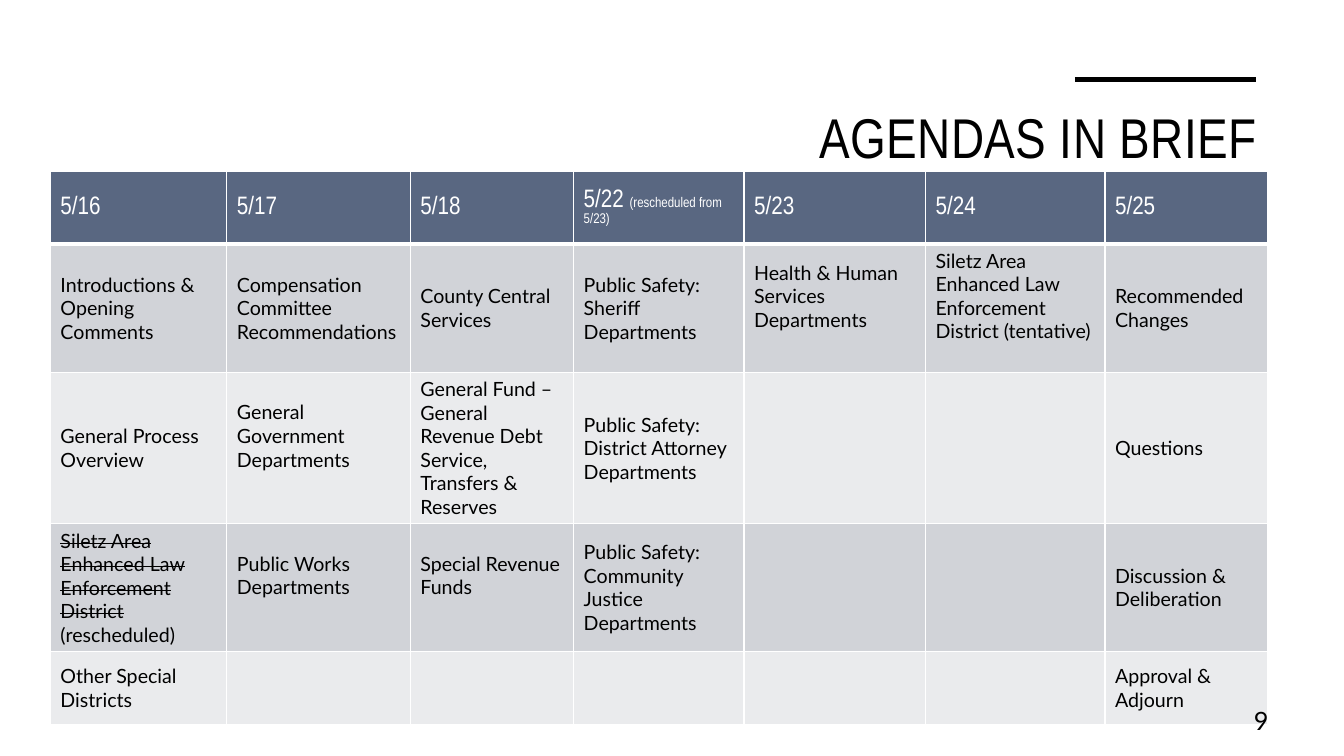
import pptx
import pptx.util
import pptx.dml.color
import pptx.enum.shapes
import pptx.enum.text
from dataclasses import dataclass
from lxml import etree
from pptx.oxml.ns import qn

Inches, Pt = pptx.util.Inches, pptx.util.Pt
RGB = pptx.dml.color.RGBColor.from_string
MIDDLE = pptx.enum.text.MSO_ANCHOR.MIDDLE
RIGHT = pptx.enum.text.PP_ALIGN.RIGHT


@dataclass(frozen=True)
class Theme:
    heading_font: str = "Arial Narrow"
    body_font: str = "Lato"
    ink: str = "000000"
    white: str = "FFFFFF"
    header_fill: str = "596781"
    band_fills: tuple = ("D1D3D8", "EAEBED")
    title_size: int = 40
    date_size: int = 18
    note_size: int = 10
    item_size: int = 14
    number_size: int = 18


theme = Theme()


def style_run(run, font, size, color):
    run.font.name, run.font.size = font, Pt(size)
    run.font.bold = False
    run.font.color.rgb = RGB(color)


def add_border(cell, side, width):
    line = etree.SubElement(cell._tc.get_or_add_tcPr(), qn(f"a:ln{side}"), w=str(Pt(width)))
    fill = etree.SubElement(line, qn("a:solidFill"))
    etree.SubElement(fill, qn("a:srgbClr"), val=theme.white)


# Agenda content: one list per row, one entry per meeting date
dates = ["5/16", "5/17", "5/18", "5/22 ", "5/23", "5/24", "5/25"]
reschedule_note = "(rescheduled from 5/23)"
agenda = [
    ["Introductions & Opening Comments", "Compensation Committee Recommendations",
     "County Central Services", "Public Safety: Sheriff Departments",
     "Health & Human Services Departments",
     "Siletz Area Enhanced Law Enforcement District (tentative)", "Recommended Changes"],
    ["General Process\nOverview", "General Government Departments",
     "General Fund – General Revenue Debt Service, Transfers & Reserves",
     "Public Safety: District Attorney Departments", "", "", "Questions"],
    ["", "Public Works Departments", "Special Revenue Funds",
     "Public Safety: Community Justice Departments", "", "", "Discussion & Deliberation"],
    ["Other Special Districts", "", "", "", "", "", "Approval & Adjourn"],
]
# Text pieces of the rescheduled item, with whether each is struck through
rescheduled_item = [("Siletz Area", True), (" ", False), ("Enhanced Law Enforcement", True),
                    (" ", False), ("District ", True), ("(rescheduled)", False)]
rescheduled_position = (3, 0)
raised_items = {(1, 4), (1, 5), (2, 1), (3, 1), (3, 2)}
column_widths = [1.75, 1.82, 1.62, 1.69, 1.8, 1.78, 1.61]
row_heights = [0.72, 1.27, 1.5, 1.27, 0.72]

# Slide
deck = pptx.Presentation()
deck.slide_width, deck.slide_height = Inches(13.33), Inches(7.5)
slide = deck.slides.add_slide(deck.slide_layouts[5])

# Accent rule above the title
accent = slide.shapes.add_connector(pptx.enum.shapes.MSO_CONNECTOR.STRAIGHT,
                                    Inches(10.66), Inches(0.79), Inches(12.46), Inches(0.79))
accent.line.color.rgb = RGB(theme.ink)
accent.line.width = Pt(3.5)
etree.SubElement(accent._element.spPr, qn("a:effectLst"))

# Title
title = slide.shapes.title
title.left, title.top = Inches(0.76), Inches(0.97)
title.width, title.height = Inches(11.81), Inches(1.15)
title.text_frame.text = "AGENDAS IN BRIEF"
title.text_frame.auto_size = pptx.enum.text.MSO_AUTO_SIZE.NONE
title.text_frame.vertical_anchor = pptx.enum.text.MSO_ANCHOR.TOP
heading = title.text_frame.paragraphs[0]
heading.alignment = RIGHT
style_run(heading.runs[0], theme.heading_font, theme.title_size, theme.ink)
heading.runs[0].font._element.set("spc", "30")

# Agenda table
schedule = slide.shapes.add_table(len(row_heights), len(dates), Inches(0.5), Inches(1.7),
                                  Inches(sum(column_widths)), Inches(sum(row_heights))).table
schedule.horz_banding = False
for column, width in zip(schedule.columns, column_widths):
    column.width = Inches(width)
for row, height in zip(schedule.rows, row_heights):
    row.height = Inches(height)

for row_index, entries in enumerate([dates] + agenda):
    is_header = row_index == 0
    if is_header:
        look = (theme.heading_font, theme.date_size, theme.white)
        row_fill = theme.header_fill
    else:
        look = (theme.body_font, theme.item_size, theme.ink)
        row_fill = theme.band_fills[(row_index - 1) % 2]
    for column_index, entry in enumerate(entries):
        cell = schedule.cell(row_index, column_index)
        for side in "LRTB":
            under_header = (row_index, side) in {(0, "B"), (1, "T")}
            add_border(cell, side, 3 if under_header else 1)
        cell.fill.solid()
        cell.fill.fore_color.rgb = RGB(row_fill)
        cell.vertical_anchor = MIDDLE
        if (row_index, column_index) in raised_items:
            cell.margin_bottom = Inches(0.29)
        item = cell.text_frame.paragraphs[0]
        item.text = entry
        if (row_index, column_index) == rescheduled_position:
            for piece, struck in rescheduled_item:
                run = item.add_run()
                run.text = piece
                if struck:
                    run.font._element.set("strike", "sngStrike")
        for run in item.runs:
            style_run(run, *look)
        if not item.runs:
            item.font.size = Pt(theme.item_size)

# Small note beside the moved date
note = schedule.cell(0, 3).text_frame.paragraphs[0].add_run()
note.text = reschedule_note
style_run(note, theme.heading_font, theme.note_size, theme.white)

# Page number
page_number = slide.shapes.add_textbox(Inches(11.94), Inches(6.95), Inches(0.74), Inches(0.4))
page_number.text_frame.word_wrap = True
page_number.text_frame.vertical_anchor = MIDDLE
page_number.text_frame.text = "9"
digit = page_number.text_frame.paragraphs[0]
digit.alignment = RIGHT
style_run(digit.runs[0], theme.body_font, theme.number_size, theme.ink)

deck.save("out.pptx")
